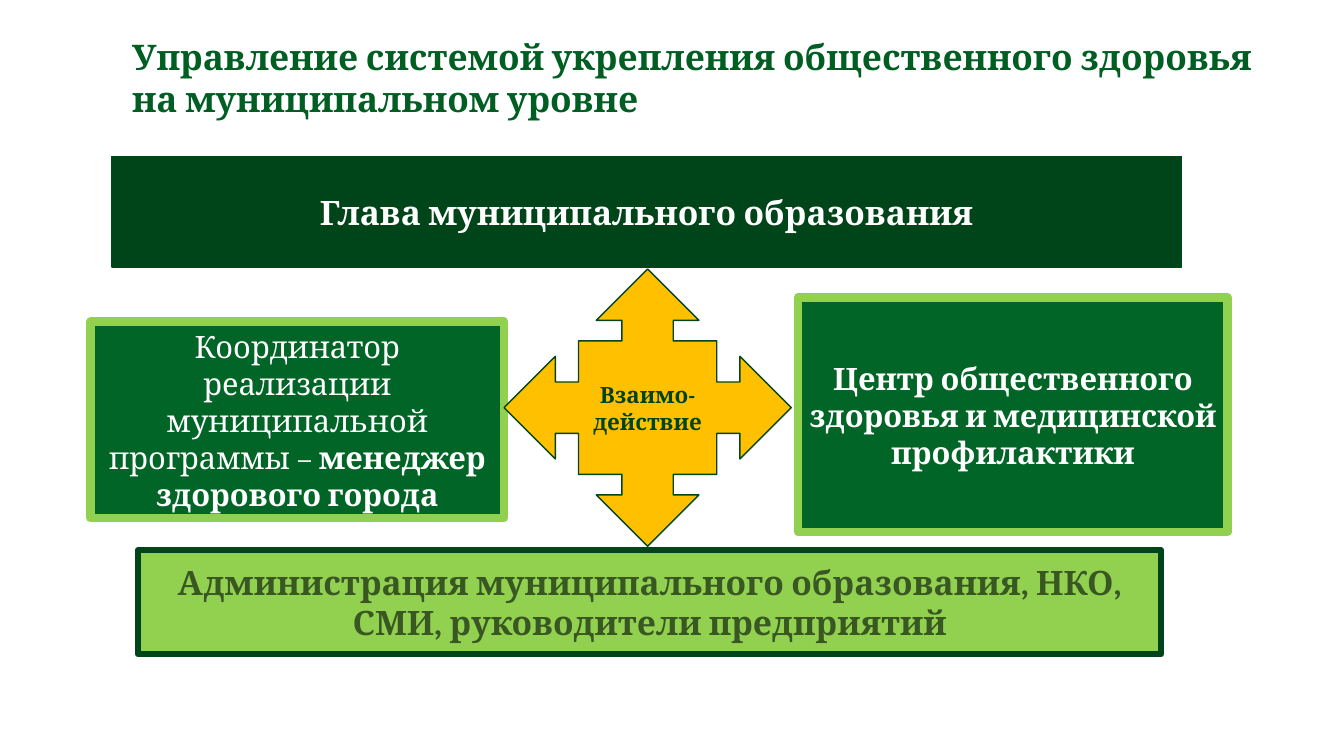
from pptx import Presentation
from pptx.dml.color import RGBColor
from pptx.enum.shapes import MSO_SHAPE as Kind
from pptx.enum.text import MSO_ANCHOR as Anchor, MSO_AUTO_SIZE as Fit, PP_ALIGN as Align
from pptx.util import Pt

FONT = "Cambria"
DARK = RGBColor(0x00, 0x44, 0x19)
EDGE = RGBColor(0x00, 0x46, 0x1A)
HEAD = RGBColor(0x00, 0x5E, 0x23)
GREEN = RGBColor(0x00, 0x65, 0x26)
LIME = RGBColor(0x92, 0xD0, 0x50)
GOLD = RGBColor(0xFF, 0xC0, 0x00)
OLIVE = RGBColor(0x38, 0x57, 0x23)
WHITE = RGBColor(0xFF, 0xFF, 0xFF)

SIDE = {"fill": GREEN, "line": LIME, "weight": 6, "size": 22, "color": WHITE}


def write(shape, runs, size, color, align):
    """Fill a shape with one paragraph of (text, bold) runs."""
    frame = shape.text_frame
    form = {"word_wrap": True, "auto_size": Fit.NONE, "vertical_anchor": Anchor.MIDDLE}
    for name, value in form.items():
        setattr(frame, name, value)
    para = frame.paragraphs[0]
    para.alignment = align
    for index, (text, bold) in enumerate(runs):
        if index == 0 and "\v" in text:
            first, text = text.split("\v")
            style(para.add_run(), first, size, color, bold)
            para.add_line_break()
        style(para.add_run(), text, size, color, bold)


def style(run, text, size, color, bold):
    run.text = text
    for name, value in {"name": FONT, "size": Pt(size), "bold": bold}.items():
        setattr(run.font, name, value)
    run.font.color.rgb = color


def place(shape, box):
    for name, value in zip(("left", "top", "width", "height"), box):
        setattr(shape, name, Pt(value))


def add_title(slide, box, text):
    title = slide.shapes.title
    place(title, box)
    write(title, [(text, True)], 25.2, HEAD, Align.LEFT)


def add_block(slide, box, runs, fill, line, weight, size, color, kind=Kind.RECTANGLE):
    block = slide.shapes.add_shape(kind, *map(Pt, box))
    block.shadow.inherit = False
    block.fill.solid()
    block.fill.fore_color.rgb = fill
    block.line.color.rgb = line
    block.line.width = Pt(weight)
    write(block, runs, size, color, Align.CENTER)


def main():
    deck = Presentation()
    deck.slide_width, deck.slide_height = Pt(960), Pt(540)
    slide = deck.slides.add_slide(deck.slide_layouts[5])

    add_title(slide, (87.1, 20.9, 842.4, 68.4),
              "Управление системой укрепления общественного здоровья\vна муниципальном уровне")
    add_block(slide, (79.9, 111.6, 763.9, 79.2),
              [("Глава муниципального образования", True)],
              fill=DARK, line=DARK, weight=1, size=24, color=WHITE)
    add_block(slide, (64.8, 229.7, 295.2, 140.4),
              [("Координатор реализации муниципальной программы – ", False),
               ("менеджер здорового города", True)], **SIDE)
    add_block(slide, (360, 192.2, 205.2, 198), [("Взаимо-действие", True)],
              fill=GOLD, line=EDGE, weight=1, size=16, color=DARK,
              kind=Kind.QUAD_ARROW_CALLOUT)
    add_block(slide, (570.2, 212.4, 306.7, 167.8),
              [("Центр общественного здоровья и медицинской профилактики", True)], **SIDE)
    add_block(slide, (98.6, 393.1, 730.8, 74.2),
              [("Администрация муниципального образования, НКО, СМИ, руководители предприятий", True)],
              fill=LIME, line=DARK, weight=4.5, size=24, color=OLIVE)

    deck.save("out.pptx")


if __name__ == "__main__":
    main()
